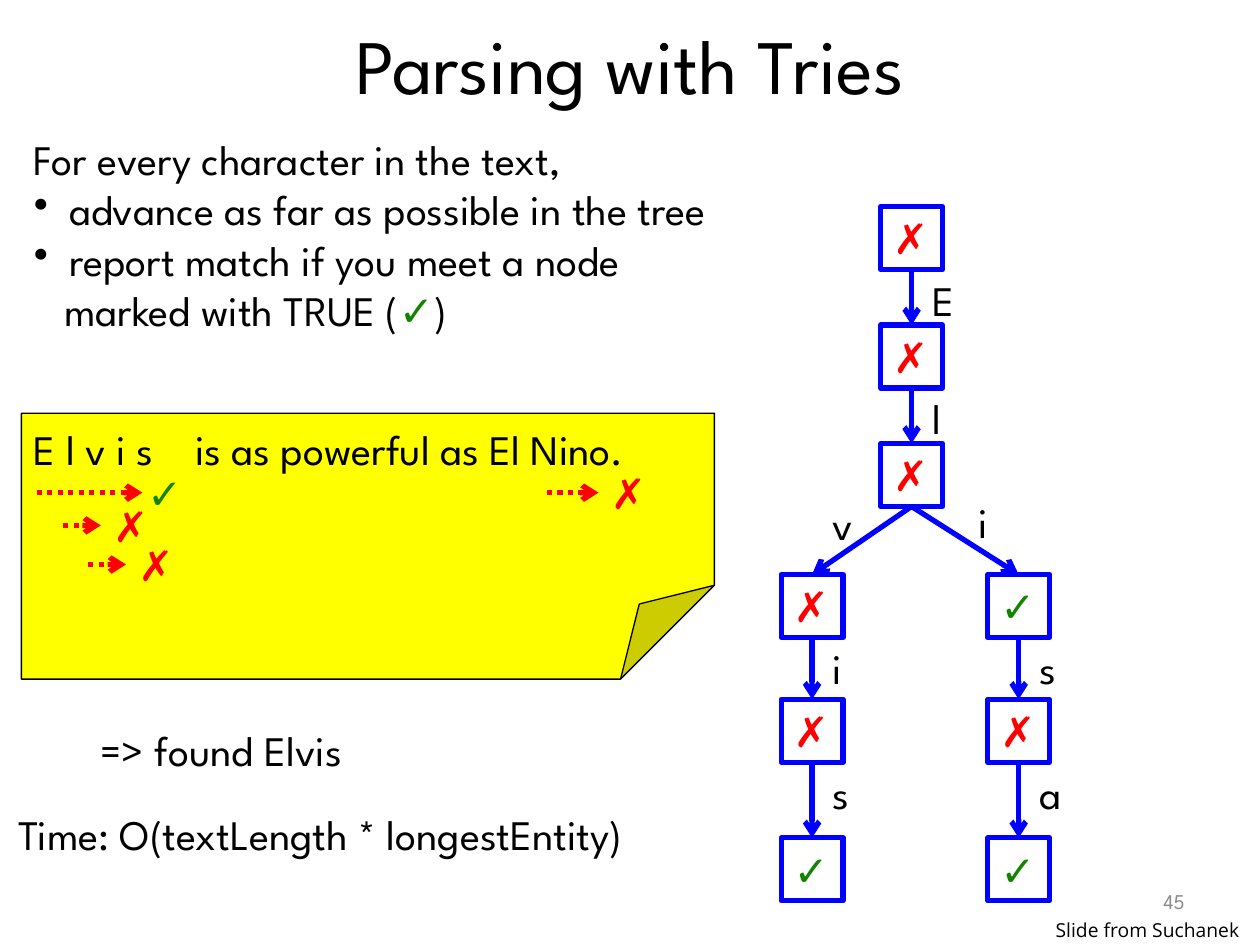
from lxml import etree
from pptx import Presentation
from pptx.dml.color import RGBColor
from pptx.enum import dml, shapes, text
from pptx.oxml import ns
from pptx.util import Inches, Pt

BLACK = RGBColor(0x00, 0x00, 0x00)
GREY = RGBColor(0x8C, 0x8C, 0x8C)
RED = RGBColor(0xFF, 0x00, 0x00)
GREEN = RGBColor(0x12, 0x84, 0x00)
BLUE = RGBColor(0x00, 0x01, 0xFF)
YELLOW = RGBColor(0xFF, 0xFF, 0x00)
FONT = "League Spartan"
YES, NO = "✓", "✗"
MARK_COLOR = {YES: GREEN, NO: RED}

# (text, left margin, bulleted)
RULES = [
    ("For every character in the text,", 0, False),
    ("advance as far as possible in the tree", 0.28, True),
    ("report match if you meet a node", 0.28, True),
    ("marked with TRUE (✓)", 0.24, False),
]
SENTENCE = "E l v i s\tis as powerful as El Nino."
# (start x, end x, y, result, result x)
SCANS = [
    (0.29, 1.13, 3.91, YES, 1.07),
    (0.5, 0.8, 4.17, NO, 0.8),
    (0.7, 1.0, 4.48, NO, 1.0),
    (4.34, 4.75, 3.91, NO, 4.75),
]
# prefix: mark
TRIE = {"": NO, "E": NO, "El": NO,
        "Elv": NO, "Elvi": NO, "Elvis": YES,
        "Eli": YES, "Elis": NO, "Elisa": YES}
LEVEL_TOPS = [1.64, 2.58, 3.52, 4.56, 5.55, 6.65]
TRUNK_X = 6.99
BRANCH_X = {"Elv": 6.2, "Eli": 7.84}
BRANCH_LABELS = {"Elv": (6.51, 3.91), "Eli": (7.67, 3.89)}
NODE_W, NODE_H = 0.49, 0.5

prs = Presentation()
prs.slide_width, prs.slide_height = Inches(10), Inches(7.5)
slide = prs.slides.add_slide(prs.slide_layouts[6])


def style(paragraph, color=BLACK, size=24, font=FONT, align=text.PP_ALIGN.LEFT):
    paragraph.alignment = align
    paragraph.font.size = Pt(size)
    paragraph.font.name = font
    paragraph.font.color.rgb = color


def add_text(content, left, top, width, height=0.5, anchor=text.MSO_ANCHOR.TOP,
             wrap=True, **look):
    frame = slide.shapes.add_textbox(
        Inches(left), Inches(top), Inches(width), Inches(height)).text_frame
    frame.word_wrap = wrap
    frame.vertical_anchor = anchor
    frame.text = content
    style(frame.paragraphs[0], **look)
    return frame


def add_arrow(x1, y1, x2, y2, color, dash=None):
    arrow = slide.shapes.add_connector(
        shapes.MSO_CONNECTOR.STRAIGHT, Inches(x1), Inches(y1), Inches(x2), Inches(y2))
    arrow.line.color.rgb = color
    arrow.line.width = Pt(3)
    if dash:
        arrow.line.dash_style = dash
    etree.SubElement(arrow.line._get_or_add_ln(), ns.qn("a:tailEnd"), type="arrow")
    etree.SubElement(arrow._element.spPr, ns.qn("a:effectLst"))
    return arrow


def add_rules():
    frame = add_text("", 0.17, 1.01, 9.83, 2.12)
    for i, (line, margin, bulleted) in enumerate(RULES):
        paragraph = frame.add_paragraph() if i else frame.paragraphs[0]
        props = paragraph._p.get_or_add_pPr()
        props.set("marL", str(Inches(margin)))
        if bulleted:
            props.set("indent", str(-Inches(margin)))
            props.insert(0, props.makeelement(ns.qn("a:buChar"), {"char": "•"}))
        for part in filter(None, line.partition(YES)):
            run = paragraph.add_run()
            run.text = part
            if part == YES:
                run.font.color.rgb = GREEN
        style(paragraph)


def add_note():
    note = slide.shapes.add_shape(
        shapes.MSO_SHAPE.FOLDED_CORNER, Inches(0.17), Inches(3.28), Inches(5.5), Inches(2.11))
    fold = note._element.spPr.find(ns.qn("a:prstGeom")).get_or_add_avLst()
    etree.SubElement(fold, ns.qn("a:gd"), name="adj", fmla="val 35300")
    note.shadow.inherit = False
    note.fill.solid()
    note.fill.fore_color.rgb = YELLOW
    note.line.color.rgb = BLACK
    note.line.width = Pt(0.75)
    frame = note.text_frame
    frame.vertical_anchor = text.MSO_ANCHOR.TOP
    frame.margin_top, frame.margin_bottom = Inches(0.08), 0
    frame.text = SENTENCE
    paragraph = frame.paragraphs[0]
    tabs = etree.SubElement(paragraph._p.get_or_add_pPr(), ns.qn("a:tabLst"))
    etree.SubElement(tabs, ns.qn("a:tab"), pos=str(Inches(1.28)), algn="l")
    style(paragraph)


def node_corner(prefix):
    return BRANCH_X.get(prefix[:3], TRUNK_X), LEVEL_TOPS[len(prefix)]


def add_node(prefix, mark):
    left, top = node_corner(prefix)
    node = slide.shapes.add_shape(
        shapes.MSO_SHAPE.RECTANGLE, Inches(left), Inches(top), Inches(NODE_W), Inches(NODE_H))
    node.shadow.inherit = False
    node.fill.background()
    node.line.color.rgb = BLUE
    node.line.width = Pt(3)
    node.text_frame.vertical_anchor = text.MSO_ANCHOR.TOP
    node.text_frame.text = mark
    style(node.text_frame.paragraphs[0], MARK_COLOR[mark])
    return node


def add_trie():
    nodes = {prefix: add_node(prefix, mark) for prefix, mark in TRIE.items()}
    for prefix in filter(None, TRIE):
        parent = prefix[:-1]
        edge = add_arrow(0, 0, 0, 0, BLUE)
        edge.begin_connect(nodes[parent], 2)
        edge.end_connect(nodes[prefix], 0)
        left, top = node_corner(parent)
        beside_edge = (left + 0.31, top + NODE_H - 0.01)
        add_text(prefix[-1], *BRANCH_LABELS.get(prefix, beside_edge), 0.36)


add_text("Parsing with Tries", 0.5, 0, 9, 1.01, text.MSO_ANCHOR.MIDDLE,
         size=44, align=text.PP_ALIGN.CENTER)
add_text("45", 7.17, 6.95, 2.33, 0.4, text.MSO_ANCHOR.MIDDLE,
         color=GREY, size=12, align=text.PP_ALIGN.RIGHT)
add_note()
add_rules()
for start, end, y, result, result_x in SCANS:
    add_arrow(start, y, end, y, RED, dml.MSO_LINE.ROUND_DOT)
    add_text(result, result_x, y - 0.25, 0.47, color=MARK_COLOR[result])
add_text("=> found Elvis", 0.7, 5.7, 3.17)
add_text("Time: O(textLength * longestEntity)", 0.05, 6.37, 6.03)
add_trie()
add_text("Slide from Suchanek", 8.28, 7.24, 1.72, 0.29, wrap=False, size=11, font="Open Sans")

prs.save("out.pptx")
